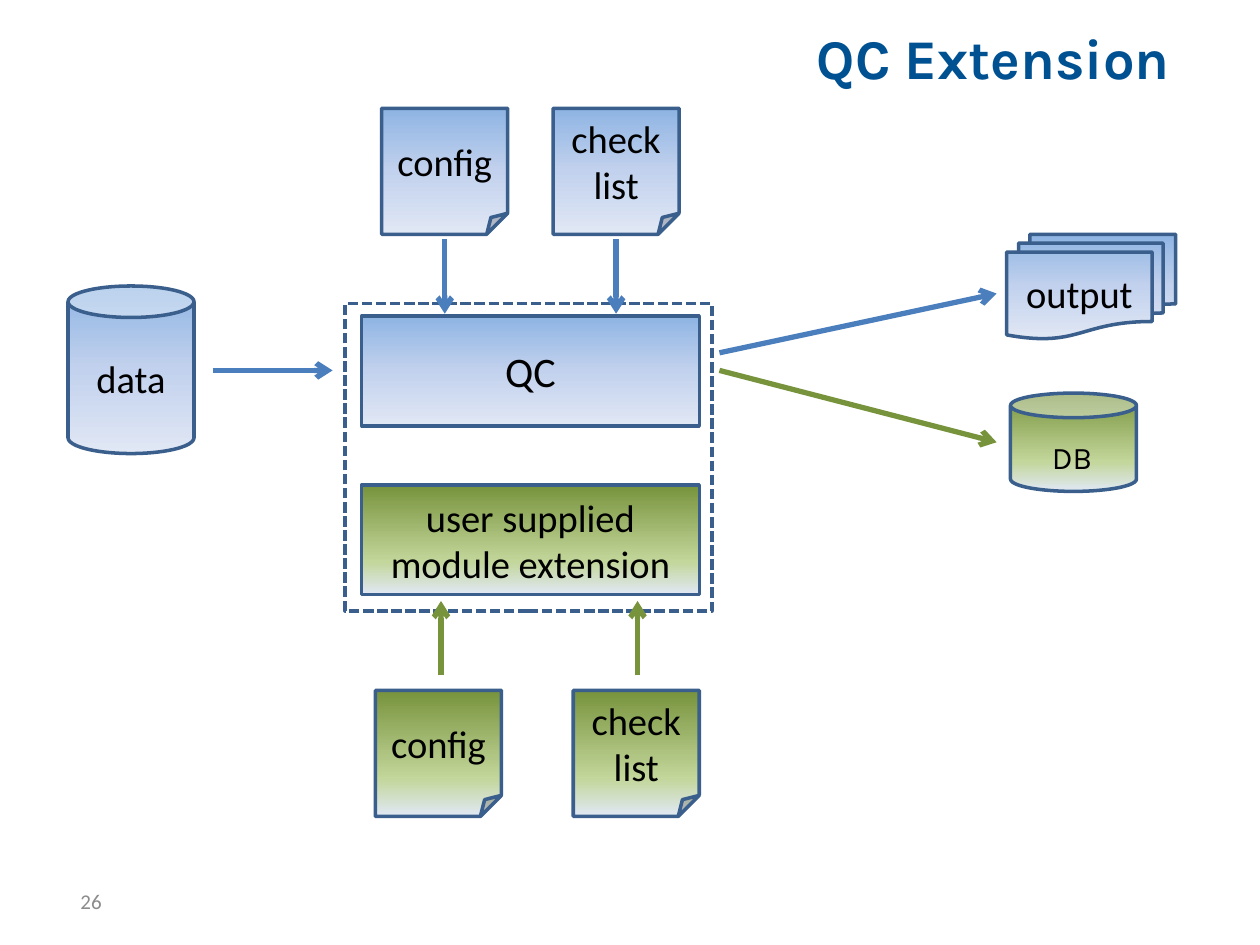
"""Build the QC Extension flow slide."""
from lxml import etree
from pptx import Presentation
from pptx.dml.color import RGBColor
from pptx.enum.dml import MSO_LINE
from pptx.enum.shapes import MSO_CONNECTOR, MSO_SHAPE
from pptx.enum.text import MSO_ANCHOR, MSO_AUTO_SIZE, PP_ALIGN
from pptx.oxml.ns import qn
from pptx.util import Inches, Pt

STRAIGHT = MSO_CONNECTOR.STRAIGHT
NOTE, CAN = MSO_SHAPE.FOLDED_CORNER, MSO_SHAPE.CAN
STEP, DOCS = MSO_SHAPE.FLOWCHART_PROCESS, MSO_SHAPE.FLOWCHART_MULTIDOCUMENT
FRAME = MSO_SHAPE.RECTANGLE
DASH = MSO_LINE.SQUARE_DOT
MIDDLE = MSO_ANCHOR.MIDDLE
CENTER, RIGHT = PP_ALIGN.CENTER, PP_ALIGN.RIGHT
GROW = MSO_AUTO_SIZE.SHAPE_TO_FIT_TEXT

NAVY = RGBColor(0x00, 0x51, 0x91)
EDGE = RGBColor(0x3A, 0x5F, 0x8C)
BLUE = RGBColor(0x4B, 0x7E, 0xBC)
GREEN = RGBColor(0x77, 0x93, 0x3C)
SKY = RGBColor(0x8E, 0xB4, 0xE3)
MIST = RGBColor(0xC2, 0xD1, 0xED)
PALE = RGBColor(0xE1, 0xE8, 0xF5)
LIME = RGBColor(0xC3, 0xD6, 0x9B)
GREY = RGBColor(0x8C, 0x8C, 0x8C)
BLACK = RGBColor(0, 0, 0)

COOL = [(0, SKY), (50, MIST), (100, PALE)]
WARM = [(0, GREEN), (70, LIME), (100, PALE)]


def write(shape, text, align=None, **form):
    frame = shape.text_frame
    frame.text = text
    frame.vertical_anchor = MIDDLE
    para = frame.paragraphs[0]
    para.alignment = align
    for run in para.runs:
        run.font.color.rgb = form["color"]
        for name in ("name", "size", "bold"):
            setattr(run.font, name, form.get(name))


def shade(shape, stops):
    shape.fill.gradient()
    shape.fill.gradient_angle = 270
    group = shape.fill._xPr.find(qn("a:gradFill")).find(qn("a:gsLst"))
    for old in list(group):
        group.remove(old)
    for place, color in stops:
        stop = etree.SubElement(group, qn("a:gs"), pos=str(place * 1000))
        etree.SubElement(stop, qn("a:srgbClr"), val=str(color))


deck = Presentation()
deck.slide_width, deck.slide_height = Inches(10), Inches(7.5)
slide = deck.slides.add_slide(deck.slide_layouts[5])
shapes = slide.shapes

title = shapes.title
title.left, title.top = Inches(0.5), Inches(0.3)
title.width, title.height = Inches(9), Inches(0.3)
write(title, "QC Extension ", RIGHT, name="Karla", size=Pt(32), bold=True, color=NAVY)

page = shapes.add_textbox(Inches(0.54), Inches(6.95), Inches(2.33), Inches(0.4))
write(page, "26", name="Calibri", size=Pt(12), color=GREY)

nodes = [
    (NOTE, 3.03, 0.86, 1, 1, COOL, "config", 22),
    (CAN, 0.54, 2.27, 1, 1.33, COOL, "data", 22),
    (STEP, 2.87, 2.51, 2.68, 0.87, COOL, "QC", 24),
    (DOCS, 7.99, 1.86, 1.34, 0.83, COOL, "output", 22),
    (NOTE, 4.39, 0.86, 1, 1, COOL, "check\vlist", 22),
    (NOTE, 2.98, 5.48, 1, 1, WARM, "config", 22),
    (STEP, 2.87, 3.85, 2.68, 0.87, WARM, "user supplied\vmodule extension", 22),
    (NOTE, 4.55, 5.48, 1, 1, WARM, "check\vlist", 22),
    (CAN, 8.02, 3.12, 1, 0.78, WARM, "", 22),
    (FRAME, 2.74, 2.41, 2.91, 2.44, None, "", 22),
]
for kind, left, top, width, height, stops, text, size in nodes:
    node = shapes.add_shape(kind, Inches(left), Inches(top), Inches(width), Inches(height))
    node.shadow.inherit = False
    node.line.color.rgb = EDGE
    node.line.width = Pt(2)
    if stops:
        shade(node, stops)
    else:
        node.fill.background()
        node.line.dash_style = DASH
    if text:
        write(node, text, CENTER, name="Calibri", size=Pt(size), color=BLACK)

label = shapes.add_textbox(Inches(8.25), Inches(3.28), Inches(0.55), Inches(0.49))
write(label, "DB", name="Karla", size=Pt(18), color=BLACK)
label.text_frame.auto_size = GROW
label.text_frame.vertical_anchor = None
label.text_frame.paragraphs[0].line_spacing = 1.5

arrows = [
    (1.69, 2.94, 2.64, 2.94, BLUE),
    (3.53, 1.9, 3.53, 2.49, BLUE),
    (4.89, 1.9, 4.89, 2.49, BLUE),
    (5.71, 2.8, 7.91, 2.33, BLUE),
    (5.06, 5.36, 5.06, 4.77, GREEN),
    (3.5, 5.36, 3.5, 4.77, GREEN),
    (5.71, 2.94, 7.91, 3.51, GREEN),
]
for *ends, color in arrows:
    arrow = shapes.add_connector(STRAIGHT, *[Inches(end) for end in ends])
    arrow.line.color.rgb = color
    arrow.line.width = Pt(3)
    etree.SubElement(arrow.line._get_or_add_ln(), qn("a:tailEnd"), type="arrow")
    etree.SubElement(arrow._element.spPr, qn("a:effectLst"))

deck.save("out.pptx")
